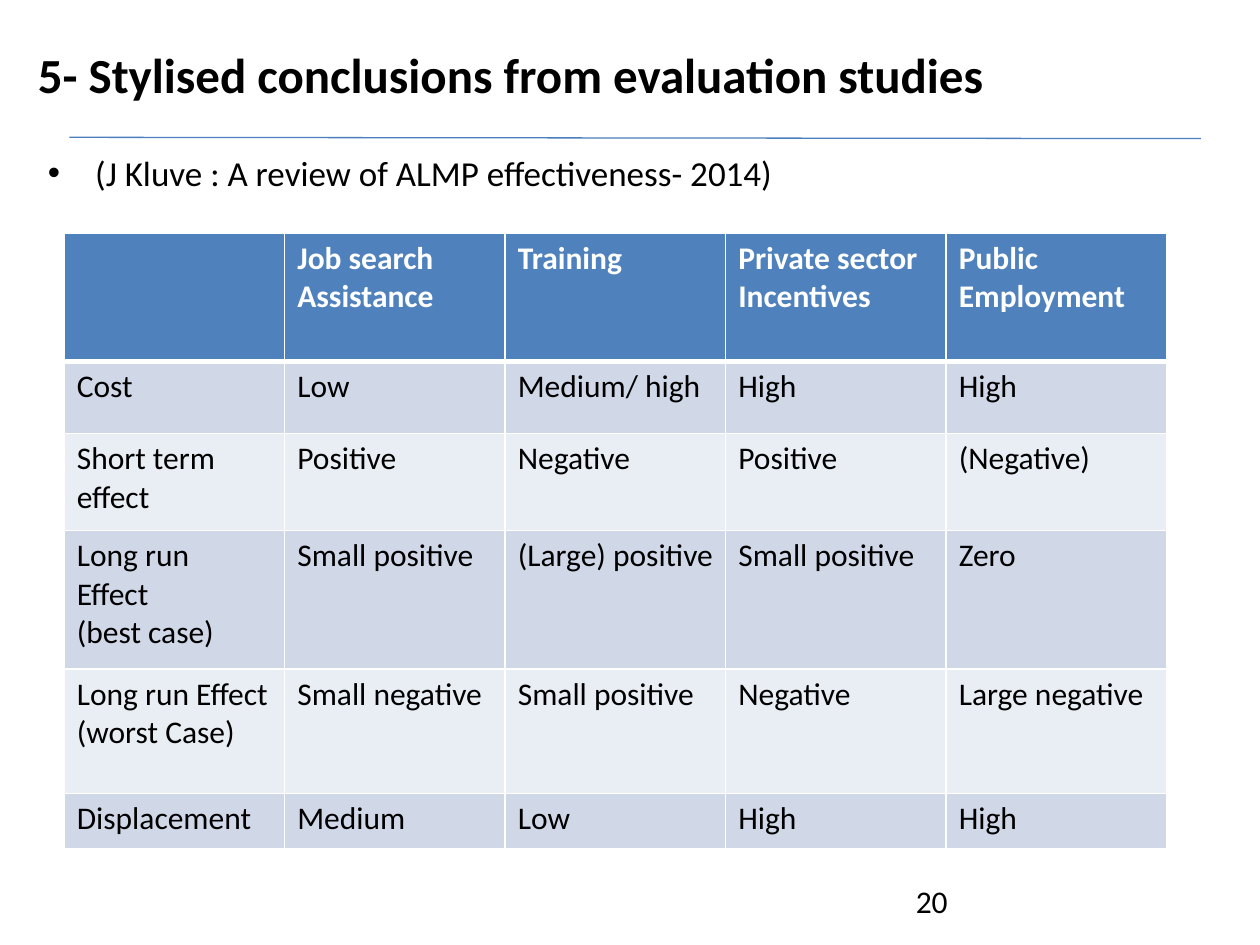
from dataclasses import dataclass

from lxml import etree
from pptx import Presentation
from pptx.dml.color import RGBColor
from pptx.enum.shapes import MSO_CONNECTOR
from pptx.enum.text import MSO_ANCHOR, MSO_AUTO_SIZE, PP_ALIGN
from pptx.oxml.ns import qn
from pptx.util import Inches, Pt

STRAIGHT = MSO_CONNECTOR.STRAIGHT
TOP = MSO_ANCHOR.TOP
NO_AUTOFIT = MSO_AUTO_SIZE.NONE
LEFT = PP_ALIGN.LEFT

FONT = "Calibri"
BLACK, WHITE = "000000", "FFFFFF"
RULE_BLUE, HEADER_BLUE = "4B7EBC", "4F81BD"
BANDS = ("D0D8E8", "E9EDF4")
COLUMN_WIDTH = 1.75


@dataclass
class Row:
    height: float
    cells: tuple


ROWS = (
    Row(1.02, ("", "Job search Assistance", "Training",
               "Private sector Incentives", "Public Employment")),
    Row(0.57, ("Cost", "Low", "Medium/ high", "High", "High")),
    Row(0.77, ("Short term effect", "Positive", "Negative", "Positive", "(Negative)")),
    Row(1.1, ("Long run\vEffect\n(best case)", "Small positive", "(Large) positive",
              "Small positive", "Zero")),
    Row(0.99, ("Long run Effect\n(worst Case)", "Small negative", "Small positive",
               "Negative", "Large negative")),
    Row(0.44, ("Displacement", "Medium", "Low", "High", "High")),
)


def color(value: str) -> RGBColor:
    return RGBColor.from_string(value)


def place(shape, left: float, top: float, width: float, height: float) -> None:
    shape.left, shape.top = Inches(left), Inches(top)
    shape.width, shape.height = Inches(width), Inches(height)


def write(frame, text: str, size: float, fill: str = BLACK, bold: bool = False) -> None:
    frame.text = text
    for paragraph in frame.paragraphs:
        paragraph.alignment = LEFT
        font = paragraph.font
        font.name, font.size, font.bold = FONT, Pt(size), bold
        font.color.rgb = color(fill)


def prepare(frame) -> None:
    frame.word_wrap = True
    frame.auto_size = NO_AUTOFIT
    frame.vertical_anchor = TOP


def set_borders(cell, top: float, bottom: float) -> None:
    properties = cell._tc.get_or_add_tcPr()
    sides = (("lnL", 1), ("lnR", 1), ("lnT", top), ("lnB", bottom))
    for index, (side, width) in enumerate(sides):
        line = etree.Element(qn(f"a:{side}"), w=str(Pt(width)))
        solid = etree.SubElement(line, qn("a:solidFill"))
        etree.SubElement(solid, qn("a:srgbClr"), val=WHITE)
        properties.insert(index, line)


def add_rule(slide) -> None:
    rule = slide.shapes.add_connector(
        STRAIGHT, Inches(0.55), Inches(1.09), Inches(9.53), Inches(1.1))
    rule.line.color.rgb = color(RULE_BLUE)
    rule.line.width = Pt(0.75)
    etree.SubElement(rule._element.spPr, qn("a:effectLst"))


def add_bullet(paragraph, indent: float) -> None:
    properties = paragraph._p.get_or_add_pPr()
    properties.set("marL", str(Inches(indent)))
    properties.set("indent", str(-Inches(indent)))
    etree.SubElement(properties, qn("a:buFont"), typeface="Arial")
    etree.SubElement(properties, qn("a:buChar"), char="•")


def add_effects_table(slide) -> None:
    column_count = len(ROWS[0].cells)
    frame = slide.shapes.add_table(
        len(ROWS), column_count, Inches(0.51), Inches(1.85),
        Inches(COLUMN_WIDTH * column_count), Inches(sum(row.height for row in ROWS)))
    table = frame.table
    for column in table.columns:
        column.width = Inches(COLUMN_WIDTH)
    for row_index, row in enumerate(ROWS):
        table.rows[row_index].height = Inches(row.height)
        header = row_index == 0
        for column_index, text in enumerate(row.cells):
            cell = table.cell(row_index, column_index)
            write(cell.text_frame, text, 18, WHITE if header else BLACK, header)
            cell.fill.solid()
            cell.fill.fore_color.rgb = color(
                HEADER_BLUE if header else BANDS[(row_index - 1) % 2])
            set_borders(cell, 3 if row_index == 1 else 1, 3 if header else 1)


def main() -> None:
    presentation = Presentation()
    presentation.slide_width, presentation.slide_height = Inches(10), Inches(7.5)
    slide = presentation.slides.add_slide(presentation.slide_layouts[1])
    add_rule(slide)

    # Title
    title = slide.shapes.title
    place(title, 0.2, 0.3, 9.3, 1.25)
    prepare(title.text_frame)
    write(title.text_frame, "5- Stylised conclusions from evaluation studies", 28, bold=True)

    # Reference
    body = slide.placeholders[1]
    place(body, 0.28, 1.15, 9.22, 5.55)
    prepare(body.text_frame)
    reference = body.text_frame.paragraphs[0]
    add_bullet(reference, 0.38)
    write(body.text_frame, "(J Kluve : A review of ALMP effectiveness- 2014)", 20)
    reference.space_before = Pt(0)

    add_effects_table(slide)

    # Page number
    number = slide.shapes.add_textbox(
        Inches(7.17), Inches(6.95), Inches(2.33), Inches(0.4))
    prepare(number.text_frame)
    write(number.text_frame, "20", 18)

    presentation.save("out.pptx")


if __name__ == "__main__":
    main()
